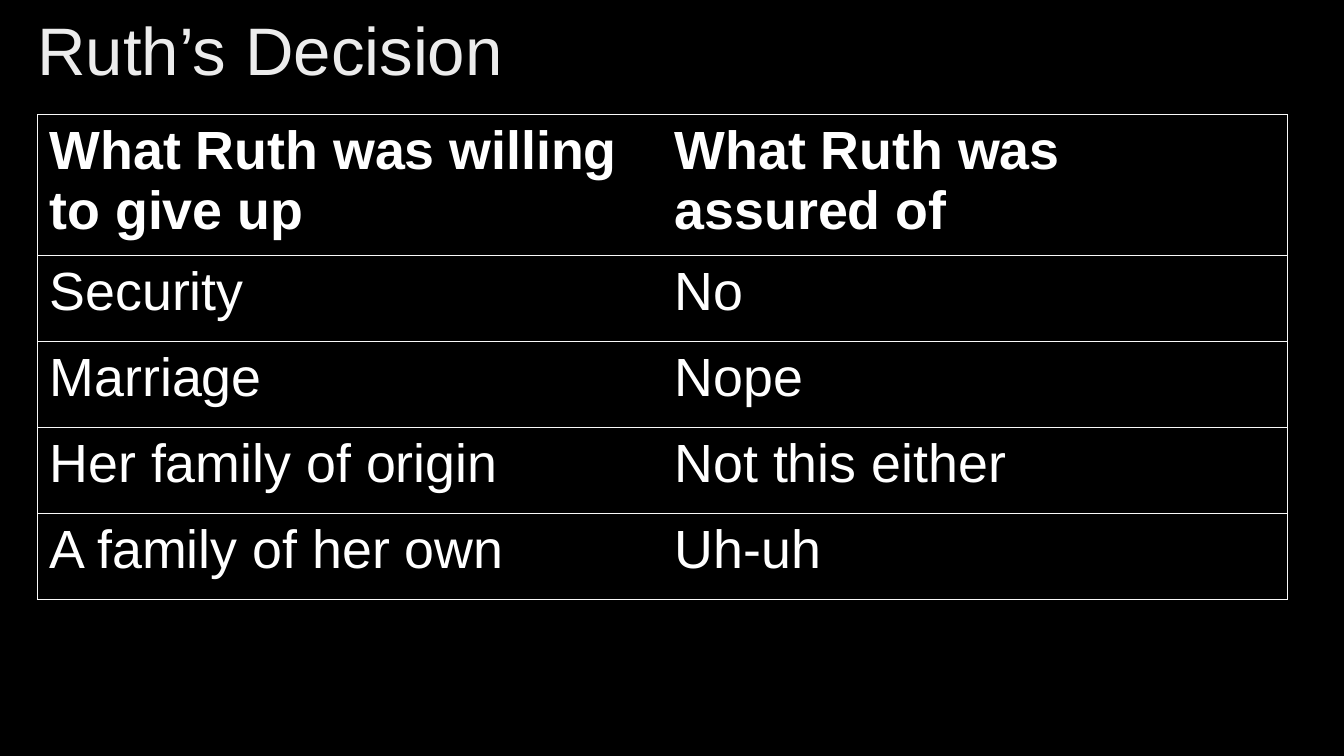
from lxml.etree import SubElement
from pptx import Presentation
from pptx.dml.color import RGBColor
from pptx.enum.text import MSO_ANCHOR, PP_ALIGN
from pptx.oxml.ns import qn
from pptx.util import Inches, Pt

ROWS = [
    ("What Ruth was willing to give up", "What Ruth was assured of"),
    ("Security", "No"),
    ("Marriage", "Nope"),
    ("Her family of origin", "Not this either"),
    ("A family of her own", "Uh-uh"),
]


def color(value):
    """Turn a hex string into a colour."""
    return RGBColor.from_string(value)


class SlideBuilder:
    """Hold the style and the slide, with positions in percent of its size."""

    font_name = "Arial"
    background = "000000"
    title_color = "ECECEC"
    text_color = "FFFFFF"
    border_color = "F9F9F9"

    def __init__(self, presentation):
        """Add a title-only slide with a plain background."""
        self.width = presentation.slide_width
        self.height = presentation.slide_height
        self.slide = presentation.slides.add_slide(presentation.slide_layouts[5])
        fill = self.slide.background.fill
        fill.solid()
        fill.fore_color.rgb = color(self.background)

    def across(self, percent):
        """Convert a percentage of the slide width to a length."""
        return round(self.width * percent / 100)

    def down(self, percent):
        """Convert a percentage of the slide height to a length."""
        return round(self.height * percent / 100)

    def style_text(self, paragraph, size, text_color, bold=False):
        """Format a paragraph and align it left."""
        paragraph.alignment = PP_ALIGN.LEFT
        paragraph.font.name = self.font_name
        paragraph.font.size = Pt(size)
        paragraph.font.bold = bold
        paragraph.font.color.rgb = color(text_color)

    def title(self, text, left, top, width, height):
        """Fill and place the title placeholder."""
        shape = self.slide.shapes.title
        shape.left, shape.top = self.across(left), self.down(top)
        shape.width, shape.height = self.across(width), self.down(height)
        shape.text_frame.text = text
        shape.text_frame.word_wrap = True
        shape.text_frame.vertical_anchor = MSO_ANCHOR.TOP
        self.style_text(shape.text_frame.paragraphs[0], 40, self.title_color)

    def border(self, cell, side, visible):
        """Draw or hide one side of a cell."""
        properties = cell._tc.get_or_add_tcPr()
        line = SubElement(properties, qn(f"a:ln{side}"), w=str(Pt(0.75)))
        if visible:
            fill = SubElement(line, qn("a:solidFill"))
            SubElement(fill, qn("a:srgbClr"), val=self.border_color)
        else:
            SubElement(line, qn("a:noFill"))

    def table(self, rows, left, top, width, header_height, row_height):
        """Add a table with row rules and an outer frame."""
        column_count = len(rows[0])
        total_height = header_height + row_height * (len(rows) - 1)
        table = self.slide.shapes.add_table(
            len(rows), column_count, self.across(left), self.down(top),
            self.across(width), self.down(total_height)).table
        for row_index, texts in enumerate(rows):
            is_header = row_index == 0
            table.rows[row_index].height = self.down(
                header_height if is_header else row_height)
            for column_index, text in enumerate(texts):
                cell = table.cell(row_index, column_index)
                self.border(cell, "L", column_index == 0)
                self.border(cell, "R", column_index == column_count - 1)
                self.border(cell, "T", True)
                self.border(cell, "B", True)
                cell.fill.solid()
                cell.fill.fore_color.rgb = color(self.background)
                cell.text = text
                self.style_text(cell.text_frame.paragraphs[0], 32,
                                self.text_color, is_header)


def main():
    """Build and save the slide."""
    presentation = Presentation()
    presentation.slide_width = Inches(11.11)
    presentation.slide_height = Inches(6.25)
    builder = SlideBuilder(presentation)
    builder.title("Ruth’s Decision", left=1.89, top=0.32, width=46.5, height=12.3)
    builder.table(ROWS, left=2.79, top=15.15, width=93,
                  header_height=18.65, row_height=11.38)
    presentation.save("out.pptx")


if __name__ == "__main__":
    main()
